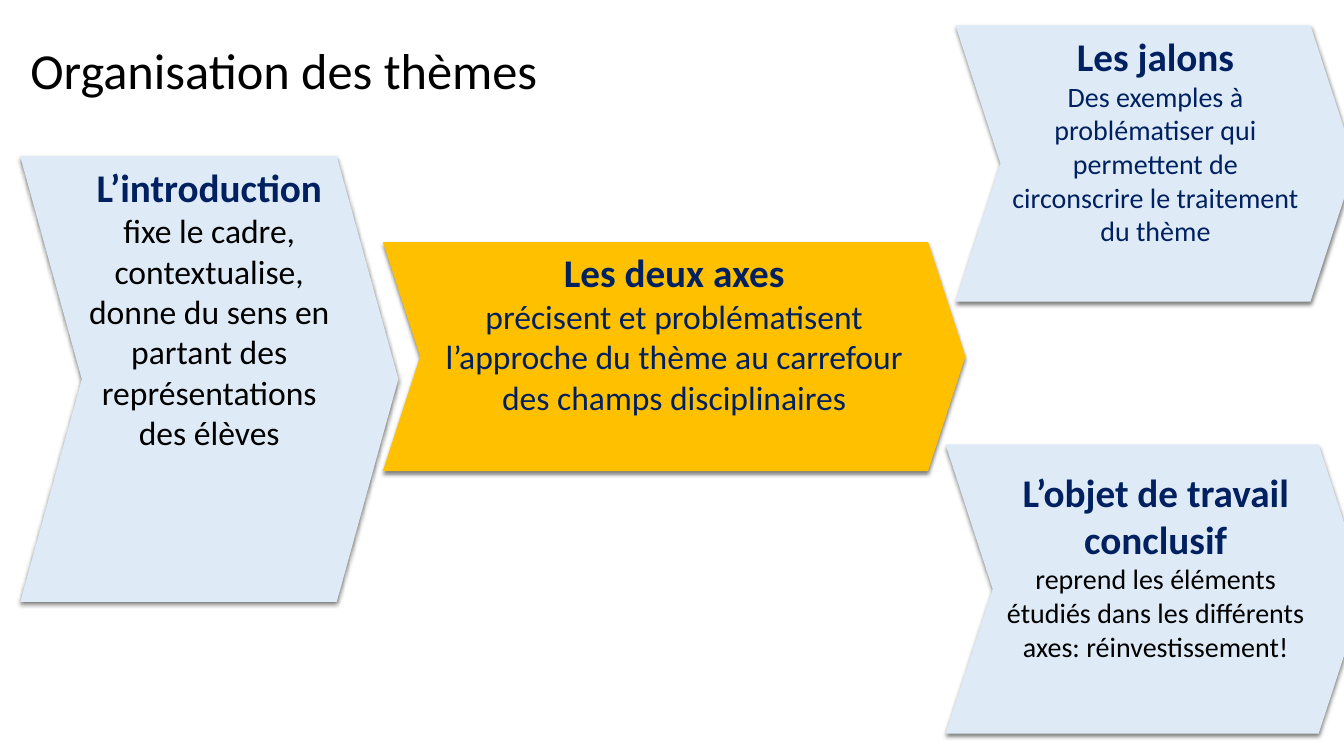
from dataclasses import dataclass

from lxml import etree
from pptx import Presentation
from pptx.dml.color import RGBColor
from pptx.enum.shapes import MSO_SHAPE
from pptx.enum.text import MSO_ANCHOR, PP_ALIGN
from pptx.oxml.ns import qn
from pptx.util import Cm, Pt

CHEVRON = MSO_SHAPE.CHEVRON
MIDDLE = MSO_ANCHOR.MIDDLE
LEFT = PP_ALIGN.LEFT
CENTER = PP_ALIGN.CENTER

FONT = "Calibri"
NAVY = "002060"
BLACK = "000000"
PALE = "DEEBF7"
GOLD = "FFC000"
INSET = 0.15
LINE = 1.2


@dataclass
class Step:
    left: float
    top: float
    width: float
    height: float
    head: str
    body: str
    size: int
    ink: str = NAVY
    fill: str = PALE
    gap: int = 1


STEPS = [
    Step(0.51, 3.94, 9.53, 11.23, "L’introduction",
         "fixe le cadre, contextualise, donne du sens en partant des "
         "représentations des élèves", 24, ink=BLACK, gap=3),
    Step(9.65, 6.1, 14.68, 5.77, "Les deux axes",
         "précisent et problématisent l’approche du thème au carrefour "
         "des champs disciplinaires", 24, fill=GOLD),
    Step(24.08, 0.64, 10.08, 6.96, "Les jalons",
         "Des exemples à problématiser qui permettent de circonscrire "
         "le traitement du thème", 20),
    Step(23.83, 11.2, 10.59, 7.29, "L’objet de travail conclusif",
         "reprend les éléments étudiés dans les différents axes: "
         "réinvestissement!", 20, ink=BLACK),
]


def color(code: str) -> RGBColor:
    return RGBColor.from_string(code)


def style(para, size: int, ink: str, align, bold: bool = False) -> None:
    para.alignment = align
    font = para.font
    font.name = FONT
    font.size = Pt(size)
    font.bold = bold
    font.color.rgb = color(ink)


def add_shadow(shape) -> None:
    shape.shadow.inherit = False
    effects = shape.element.spPr.find(qn("a:effectLst"))
    outer = etree.SubElement(
        effects, qn("a:outerShdw"), blurRad=str(Pt(3)), dist=str(Pt(2)),
        dir="5400000", algn="ctr", rotWithShape="0")
    tint = etree.SubElement(outer, qn("a:srgbClr"), val=BLACK)
    etree.SubElement(tint, qn("a:alpha"), val="50000")


def add_title(slide, text: str) -> None:
    title = slide.shapes.title
    title.left, title.top = Cm(0.51), Cm(0)
    title.width, title.height = Cm(29.21), Cm(3.68)
    frame = title.text_frame
    frame.text = text
    frame.vertical_anchor = MIDDLE
    para = frame.paragraphs[0]
    para.line_spacing = 0.9
    style(para, 36, BLACK, LEFT)


def add_step(slide, step: Step) -> None:
    shape = slide.shapes.add_shape(
        CHEVRON, Cm(step.left), Cm(step.top), Cm(step.width), Cm(step.height))
    shape.adjustments[0] = 0.163
    shape.fill.solid()
    shape.fill.fore_color.rgb = color(step.fill)
    shape.line.fill.background()
    add_shadow(shape)
    frame = shape.text_frame
    frame.word_wrap = True
    frame.vertical_anchor = MIDDLE
    frame.margin_left = frame.margin_right = frame.margin_top = Cm(INSET)
    frame.margin_bottom = Cm(INSET + step.gap * LINE)
    head = frame.paragraphs[0]
    head.text = step.head
    style(head, 28, NAVY, CENTER, bold=True)
    body = frame.add_paragraph()
    body.text = step.body
    style(body, step.size, step.ink, CENTER)


def main() -> None:
    deck = Presentation()
    deck.slide_width, deck.slide_height = Cm(33.87), Cm(19.05)
    slide = deck.slides.add_slide(deck.slide_layouts[5])
    add_title(slide, "Organisation des thèmes")
    for step in STEPS:
        add_step(slide, step)
    deck.save("out.pptx")


if __name__ == "__main__":
    main()
